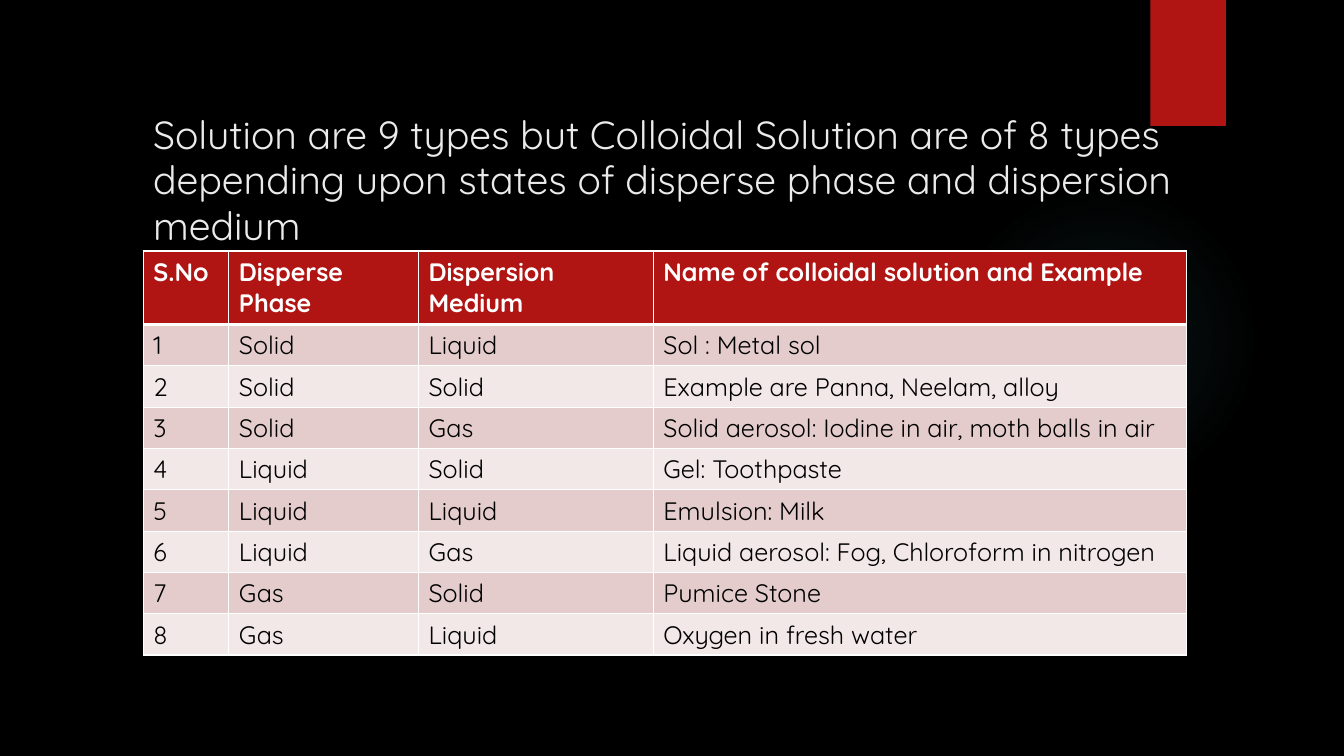
from pptx import Presentation
from pptx.dml.color import RGBColor
from pptx.enum.shapes import MSO_SHAPE
from pptx.enum.text import MSO_ANCHOR
from pptx.oxml import parse_xml
from pptx.oxml.ns import nsdecls, qn
from pptx.util import Inches, Pt

FONT = "Quicksand"
BLACK = RGBColor(0x00, 0x00, 0x00)
WHITE = RGBColor(0xFF, 0xFF, 0xFF)
RED = RGBColor(0xB0, 0x15, 0x13)
TITLE_GREY = RGBColor(0xEB, 0xEB, 0xEB)
GLOW_TEAL = RGBColor(0x50, 0xB9, 0xC1)
ROW_FILLS = [RGBColor(0xE4, 0xCC, 0xCC), RGBColor(0xF2, 0xE8, 0xE7)]

HEADINGS = ["S.No", "Disperse Phase", "Dispersion Medium",
            "Name of colloidal solution and Example"]
COLLOIDS = [
    ("Solid", "Liquid", "Sol : Metal sol"),
    ("Solid", "Solid", "Example are Panna, Neelam, alloy"),
    ("Solid", "Gas", "Solid aerosol: Iodine in air, moth balls in air"),
    ("Liquid", "Solid", "Gel: Toothpaste"),
    ("Liquid", "Liquid", "Emulsion: Milk"),
    ("Liquid", "Gas", "Liquid aerosol: Fog, Chloroform in nitrogen"),
    ("Gas", "Solid", "Pumice Stone"),
    ("Gas", "Liquid", "Oxygen in fresh water"),
]
COLUMN_WIDTHS = [0.85, 1.88, 2.33, 5.29]
HEADER_HEIGHT = 0.73
ROW_HEIGHT = 0.41


def add_borders(cell, widths):
    """Draw white cell borders; widths maps L, R, T, B to points."""
    properties = cell._tc.get_or_add_tcPr()
    for index, (side, width) in enumerate(widths.items()):
        properties.insert(index, parse_xml(
            f'<a:ln{side} {nsdecls("a")} w="{Pt(width)}"><a:solidFill>'
            f'<a:srgbClr val="{WHITE}"/></a:solidFill></a:ln{side}>'))


deck = Presentation()
deck.slide_width = Inches(13.33)
deck.slide_height = Inches(7.5)
page = deck.slides.add_slide(deck.slide_layouts[6])
page.background.fill.solid()
page.background.fill.fore_color.rgb = BLACK

# Faint radial glow
glow = page.shapes.add_shape(MSO_SHAPE.OVAL, Inches(9.41), Inches(1.83),
                             Inches(3.08), Inches(3.08))
glow.shadow.inherit = False
glow.line.fill.background()
glow.fill.gradient()
stops = "".join(
    f'<a:gs pos="{position * 1000}"><a:srgbClr val="{GLOW_TEAL}">'
    f'<a:alpha val="{opacity * 1000}"/></a:srgbClr></a:gs>'
    for position, opacity in [(0, 7), (36, 6), (69, 0)])
gradient = glow._element.spPr.find(qn("a:gradFill"))
gradient.getparent().replace(gradient, parse_xml(
    f'<a:gradFill {nsdecls("a")}><a:gsLst>{stops}</a:gsLst><a:path path="circle">'
    '<a:fillToRect l="50000" t="50000" r="50000" b="50000"/></a:path></a:gradFill>'))

# Red tab
tab = page.shapes.add_shape(MSO_SHAPE.RECTANGLE, Inches(11.41), 0,
                            Inches(0.75), Inches(1.25))
tab.shadow.inherit = False
tab.fill.solid()
tab.fill.fore_color.rgb = RED
tab.line.fill.background()

# Title
title = page.shapes.add_textbox(Inches(1.42), Inches(1.07), Inches(10.5), Inches(1.42))
title.text_frame.word_wrap = True
title.text_frame.vertical_anchor = MSO_ANCHOR.TOP
para = title.text_frame.paragraphs[0]
para.text = ("Solution are 9 types but Colloidal Solution are of 8 types "
             "depending upon states of disperse phase and dispersion medium")
para.line_spacing = 0.97
para.font.name = FONT
para.font.size = Pt(28)
para.font.color.rgb = TITLE_GREY

# Table of colloids
rows = [HEADINGS] + [(str(number), *colloid)
                     for number, colloid in enumerate(COLLOIDS, 1)]
table = page.shapes.add_table(
    len(rows), len(HEADINGS), Inches(1.42), Inches(2.49), Inches(sum(COLUMN_WIDTHS)),
    Inches(HEADER_HEIGHT + ROW_HEIGHT * len(COLLOIDS))).table
for column, width in zip(table.columns, COLUMN_WIDTHS):
    column.width = Inches(width)

for row_index, texts in enumerate(rows):
    is_header = row_index == 0
    table.rows[row_index].height = Inches(HEADER_HEIGHT if is_header else ROW_HEIGHT)
    for column_index, text in enumerate(texts):
        cell = table.cell(row_index, column_index)
        cell.fill.solid()
        cell.fill.fore_color.rgb = RED if is_header else ROW_FILLS[(row_index - 1) % 2]
        add_borders(cell, {"L": 1, "R": 1, "T": 3 if row_index == 1 else 1,
                           "B": 3 if is_header else 1})
        para = cell.text_frame.paragraphs[0]
        para.text = text
        para.font.name = FONT
        para.font.size = Pt(18)
        para.font.bold = is_header
        para.font.color.rgb = WHITE if is_header else BLACK

deck.save("out.pptx")
